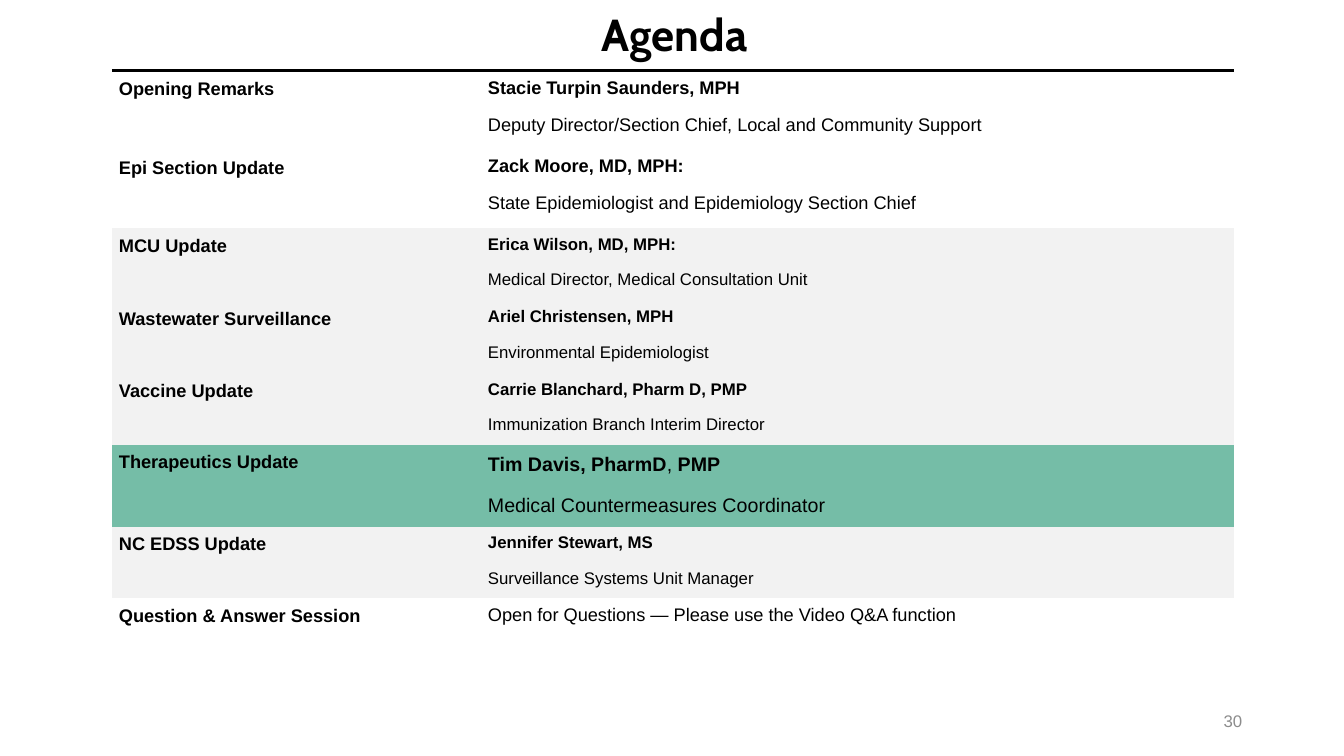
"""Build the agenda slide."""
from lxml.etree import SubElement
from pptx import Presentation
from pptx.dml.color import RGBColor
from pptx.enum.text import MSO_ANCHOR, PP_ALIGN
from pptx.oxml.ns import qn
from pptx.util import Inches, Pt

COLORS = {"ink": "000000", "gray": "F2F2F2", "green": "75BDA7", "page": "8C8C8C"}
PLAIN = "{2D5ABB26-0587-4C30-8999-92F81FD0307C}"
TITLE, PAGE = "Agenda", "30"
COLS = (3.66, 7.47)

# topic, topic spacing, height, fill, size, spacing, name runs (bold first), role
ROWS = [
    ("Opening Remarks", 1.07, 0.78, None, 13, 1, ["Stacie Turpin Saunders, MPH"],
     "Deputy Director/Section Chief, Local and Community Support"),
    ("Epi Section Update", 1.07, 0.78, None, 13, 1, ["Zack Moore, MD, MPH:"],
     "State Epidemiologist and Epidemiology Section Chief"),
    ("MCU Update", 1.07, 0.72, "gray", 12, 1, ["Erica Wilson, MD, MPH:"],
     "Medical Director, Medical Consultation Unit"),
    ("Wastewater Surveillance", 1.07, 0.72, "gray", 12, 1, ["Ariel Christensen, MPH"],
     "Environmental Epidemiologist"),
    ("Vaccine Update", 1.07, 0.72, "gray", 12, 1, ["Carrie Blanchard, Pharm D, PMP"],
     "Immunization Branch Interim Director"),
    ("Therapeutics Update", 1, 0.8, "green", 14, 1.07, ["Tim Davis, PharmD", ", ", "PMP"],
     "Medical Countermeasures Coordinator"),
    ("NC EDSS Update", 1, 0.68, "gray", 12, 1, ["Jennifer Stewart, MS"],
     "Surveillance Systems Unit Manager"),
    ("Question & Answer Session", 1.07, 0.4, None, 13, 1, [],
     "Open for Questions — Please use the Video Q&A function"),
]


def color(name):
    return RGBColor.from_string(COLORS[name])


def style(para, size, bold=False, ink="ink", face="Arial"):
    font = para.font
    font.name, font.size, font.bold = face, Pt(size), bold
    font.color.rgb = color(ink)


def fill_cell(cell, lines, size, space, fill):
    cell.margin_left = cell.margin_right = Inches(0.07)
    cell.margin_top = cell.margin_bottom = Inches(0.07)
    frame = cell.text_frame
    for i, (runs, bold) in enumerate(lines):
        para = frame.add_paragraph() if i else frame.paragraphs[0]
        para.space_before, para.space_after = Pt(6 if i else 0), Pt(6)
        para.line_spacing = space
        for j, text in enumerate(runs):
            run = para.add_run()
            run.text = text
            if len(runs) > 1:
                run.font.bold = j % 2 == 0
        style(para, size, bold)
    if fill:
        cell.fill.solid()
        cell.fill.fore_color.rgb = color(fill)
    else:
        cell.fill.background()


def rule_top(cell):
    props = cell._tc.get_or_add_tcPr()
    line = SubElement(props, qn("a:lnT"), w=str(Pt(2.25)))
    SubElement(SubElement(line, qn("a:solidFill")), qn("a:srgbClr"), val=COLORS["ink"])
    props.insert(0, line)


def add_agenda(slide):
    high = sum(row[2] for row in ROWS)
    frame = slide.shapes.add_table(len(ROWS), 2, Inches(1.11), Inches(0.7),
                                   Inches(sum(COLS)), Inches(high))
    table = frame.table
    table.first_row = table.horz_banding = False
    table._tbl.tblPr.find(qn("a:tableStyleId")).text = PLAIN
    for col, wide in zip(table.columns, COLS):
        col.width = Inches(wide)
    for i, (topic, lead, tall, fill, size, space, name, role) in enumerate(ROWS):
        table.rows[i].height = Inches(tall)
        lines = ([(name, True)] if name else []) + [([role], False)]
        fill_cell(table.cell(i, 0), [([topic], True)], 13, lead, fill)
        fill_cell(table.cell(i, 1), lines, size, space, fill)
    for cell in table.rows[0].cells:
        rule_top(cell)


def add_text(slide, text, box):
    frame = slide.shapes.add_textbox(*map(Inches, box)).text_frame
    frame.word_wrap = True
    para = frame.paragraphs[0]
    para.text = text
    return frame, para


def main():
    deck = Presentation()
    deck.slide_width, deck.slide_height = Inches(13.33), Inches(7.5)
    slide = deck.slides.add_slide(deck.slide_layouts[6])
    frame, para = add_text(slide, PAGE, (9.42, 6.95, 3, 0.4))
    frame.vertical_anchor = MSO_ANCHOR.MIDDLE
    para.alignment, para.space_after = PP_ALIGN.RIGHT, Pt(6)
    style(para, 12, ink="page")
    add_agenda(slide)
    frame, para = add_text(slide, TITLE, (5.87, 0.02, 1.72, 0.64))
    style(para, 32, True, face="Cabin")
    deck.save("out.pptx")


if __name__ == "__main__":
    main()
